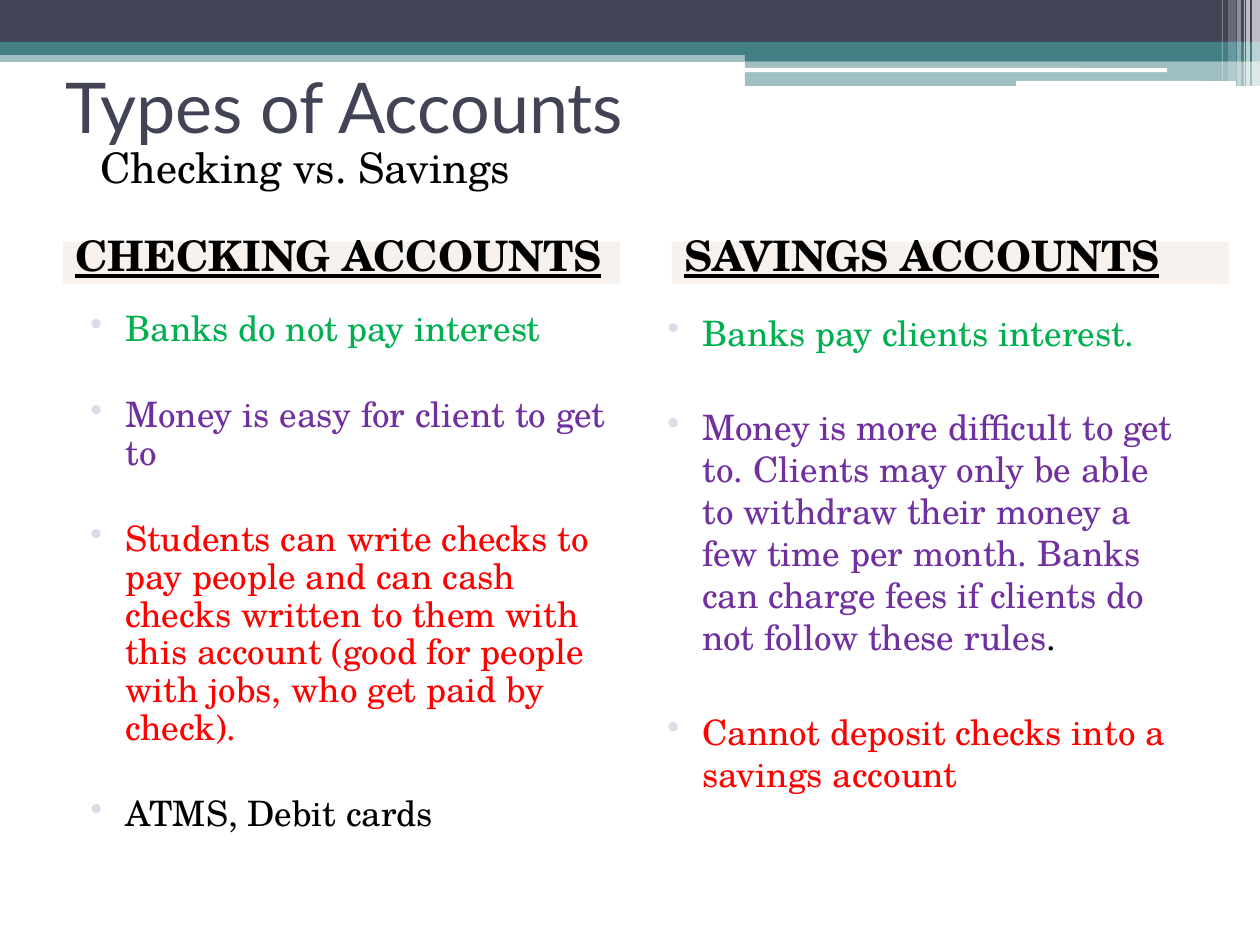
from lxml.etree import SubElement
from pptx import Presentation
from pptx.dml.color import RGBColor
from pptx.enum.shapes import MSO_SHAPE as Shape
from pptx.enum.text import MSO_ANCHOR as Anchor
from pptx.oxml.ns import qn
from pptx.util import Pt

EMU_PER_PX = 914400 / 126

WHITE = RGBColor(0xFF, 0xFF, 0xFF)
BLACK = RGBColor(0x00, 0x00, 0x00)
NAVY = RGBColor(0x42, 0x44, 0x56)
TEAL = RGBColor(0x43, 0x80, 0x86)
SAND = RGBColor(0xEC, 0xDE, 0xD4)
GREEN = RGBColor(0x00, 0xB0, 0x50)
PURPLE = RGBColor(0x70, 0x30, 0xA0)
RED = RGBColor(0xFF, 0x00, 0x00)
BULLET = RGBColor(0xDB, 0xDB, 0xE9)


def px(length):
    return round(length * EMU_PER_PX)


class SlideBuilder:
    title_font = "Lato"
    body_font = "TeX Gyre Schola"
    indent, hanging = 50, -35

    def __init__(self, page):
        self.page = page

    def bar(self, area, color, opacity=100, kind=Shape.RECTANGLE):
        box = self.page.shapes.add_shape(kind, *map(px, area))
        box.shadow.inherit = False
        box.fill.solid()
        box.fill.fore_color.rgb = color
        box.line.fill.background()
        if opacity < 100:
            tint = box.fill._xPr.find(".//" + qn("a:srgbClr"))
            SubElement(tint, qn("a:alpha"), val=str(opacity * 1000))
        return box

    def text_box(self, area, **frame_format):
        box = self.page.shapes.add_textbox(*map(px, area))
        box.text_frame.word_wrap = True
        for name, value in frame_format.items():
            setattr(box.text_frame, name, value)
        return box.text_frame

    def span(self, para, text, color, size, **font_format):
        span = para.add_run()
        span.text = text
        span.font.color.rgb = color
        font_format = {"name": self.body_font, "size": Pt(size), **font_format}
        for name, value in font_format.items():
            setattr(span.font, name, value)

    def hang(self, para):
        props = para._p.get_or_add_pPr()
        props.set("marL", str(px(self.indent)))
        props.set("indent", str(px(self.hanging)))
        return props

    def heading(self, area, text):
        self.bar(area, SAND, 39)
        frame = self.text_box(area, vertical_anchor=Anchor.BOTTOM,
                              margin_top=px(38), margin_bottom=px(6))
        para = frame.paragraphs[0]
        para.space_before = Pt(3)
        self.span(para, text, BLACK, 24, bold=True, underline=True)

    def bullets(self, area, items, gap, line_spacing):
        frame = self.text_box(area)
        for index, spans in enumerate(items):
            para = frame.add_paragraph() if index else frame.paragraphs[0]
            para.line_spacing = line_spacing
            para.space_before = Pt(gap if index else 3)
            props = self.hang(para)
            tint = SubElement(props, qn("a:buClr"))
            SubElement(tint, qn("a:srgbClr"), val=str(BULLET))
            SubElement(props, qn("a:buChar"), char="•")
            for text, color in spans:
                self.span(para, text, color, 20)


def main():
    deck = Presentation()
    deck.slide_width, deck.slide_height = px(1260), px(945)
    slide = SlideBuilder(deck.slides.add_slide(deck.slide_layouts[6]))

    # Top band
    slide.bar((0, 50, 1260, 12), TEAL, 50)
    slide.bar((0, 0, 1260, 42), NAVY)
    slide.bar((0, 42, 1260, 13), TEAL)
    slide.bar((745, 49, 515, 12), TEAL)
    slide.bar((745, 61, 515, 25), TEAL, 50)
    for area in ((745, 68, 422, 4), (1016, 81, 220, 5)):
        slide.bar(area, WHITE, kind=Shape.ROUNDED_RECTANGLE)

    # Light stripes in the corner
    for left, width, height, opacity in (
        (1252, 8, 86, 65), (1246, 4, 86, 65), (1244, 1, 86, 60),
        (1237, 4, 86, 40), (1228, 8, 81, 20), (1222, 1, 81, 30),
    ):
        slide.bar((left, 0, width, height), WHITE, opacity)

    # Title and subtitle
    title = slide.text_box((53, 32, 1134, 147), vertical_anchor=Anchor.MIDDLE)
    slide.span(title.paragraphs[0], "Types of Accounts", NAVY, 40,
               name=slide.title_font)
    subtitle = slide.text_box((73, 135, 1136, 63)).paragraphs[0]
    subtitle.space_before = Pt(3)
    slide.hang(subtitle)
    slide.span(subtitle, "Checking vs. Savings", BLACK, 24)

    # Checking column
    slide.heading((63, 242, 557, 42), "CHECKING ACCOUNTS")
    slide.bullets((63, 305, 557, 561), [
        [("Banks do not pay interest", GREEN)],
        [("Money is easy for client to get to", PURPLE)],
        [("Students can write checks to pay people and can cash checks "
          "written to them with this account (good for people with jobs, "
          "who get paid by check).", RED)],
        [("ATMS, Debit cards", BLACK)],
    ], gap=27.6, line_spacing=0.9)

    # Savings column
    slide.heading((672, 242, 557, 42), "SAVINGS ACCOUNTS")
    slide.bullets((640, 305, 557, 561), [
        [("Banks pay clients interest.", GREEN)],
        [("Money is more difficult to get to. Clients may only be able to "
          "withdraw their money a few time per month. Banks can charge fees "
          "if clients do not follow these rules", PURPLE), (".", BLACK)],
        [("Cannot deposit checks into a savings account", RED)],
    ], gap=30, line_spacing=1.0)

    deck.save("out.pptx")


if __name__ == "__main__":
    main()
